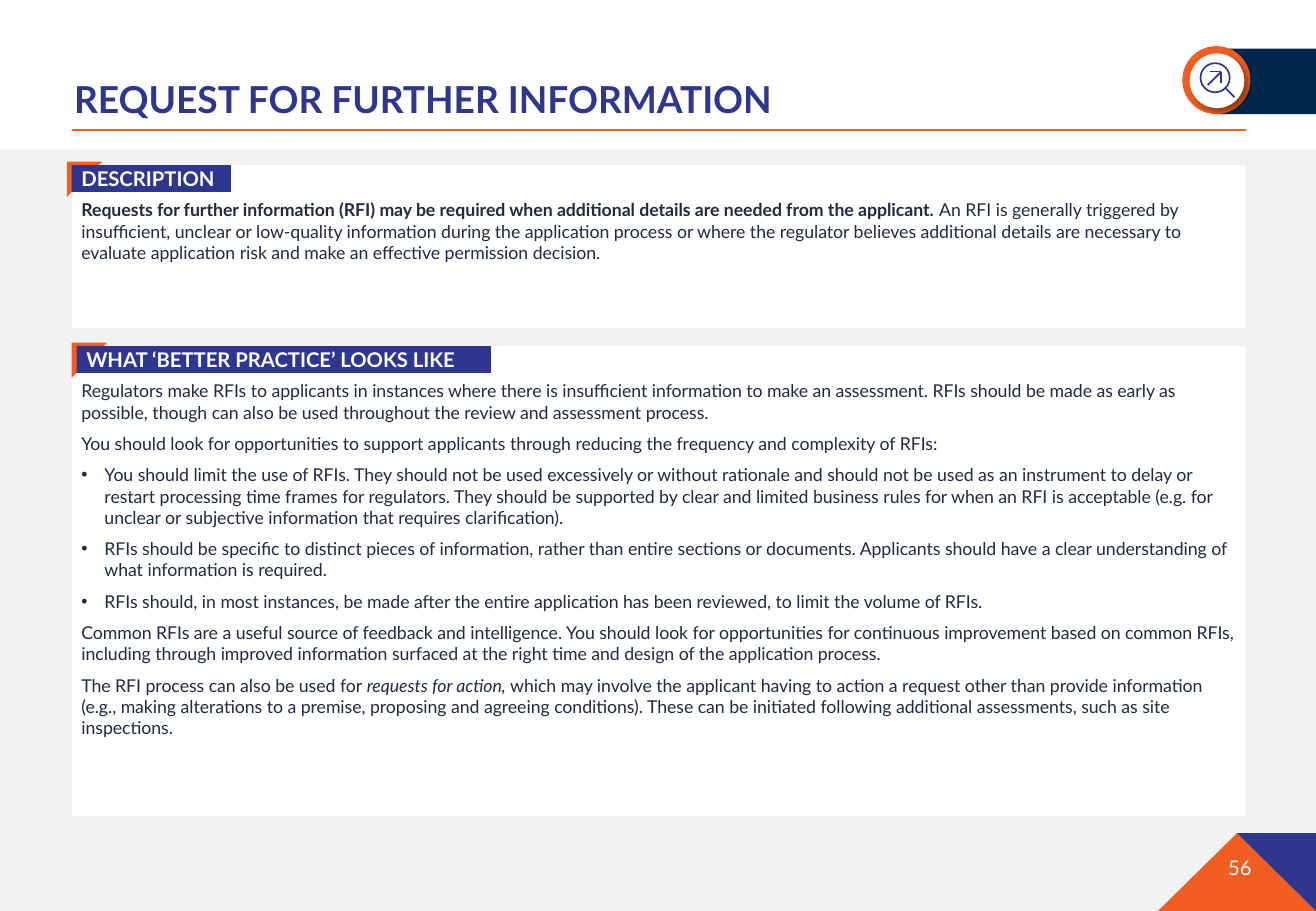
from dataclasses import dataclass

from lxml.etree import SubElement
from pptx import Presentation
from pptx.dml.color import RGBColor
from pptx.enum.shapes import MSO_CONNECTOR, MSO_SHAPE
from pptx.enum.text import MSO_ANCHOR, PP_ALIGN
from pptx.oxml.ns import qn
from pptx.util import Pt

PX = 9144


@dataclass(frozen=True)
class Theme:
    """Colours, type sizes and font of the slide."""

    font: str = "Lato"
    indigo: str = "2E368F"
    orange: str = "F25E21"
    navy: str = "00264D"
    ink: str = "1F2A44"
    grey: str = "F2F2F2"
    white: str = "FFFFFF"
    title: float = 22
    label: float = 12
    body: float = 10.5


class Slide:
    """Draws styled elements on one slide, with lengths in px."""

    def __init__(self, page, theme):
        """Keep the slide and its theme."""
        self.page = page
        self.theme = theme

    def apply(self, target, values):
        """Set each attribute named in a dict of format values."""
        for name, value in values.items():
            setattr(target, name, value)

    def paint(self, box, fill):
        """Give a shape a flat fill without line or shadow."""
        box.shadow.inherit = False
        box.line.fill.background()
        if fill:
            box.fill.solid()
            box.fill.fore_color.rgb = RGBColor.from_string(fill)
        else:
            box.fill.background()
        return box

    def shape(self, kind, area, fill, adjustments=()):
        """Add a preset shape."""
        box = self.page.shapes.add_shape(kind, *(value * PX for value in area))
        for index, value in enumerate(adjustments):
            box.adjustments[index] = value
        return self.paint(box, fill)

    def polygon(self, points, fill):
        """Add a closed outline through the points."""
        builder = self.page.shapes.build_freeform(*points[0], scale=PX)
        builder.add_line_segments(points[1:], close=True)
        return self.paint(builder.convert_to_shape(), fill)

    def outline(self, line, color, width):
        """Format the line of a shape or connector."""
        line.color.rgb = RGBColor.from_string(color)
        line.width = Pt(width)

    def line(self, start, end, color, width):
        """Add a straight line."""
        ends = (value * PX for value in (*start, *end))
        connector = self.page.shapes.add_connector(MSO_CONNECTOR.STRAIGHT, *ends)
        self.outline(connector.line, color, width)
        SubElement(connector._element.spPr, qn("a:effectLst"))

    def shadow(self, box):
        """Give a shape a soft shadow to the lower right."""
        effects = box._element.spPr.find(qn("a:effectLst"))
        outer = SubElement(effects, qn("a:outerShdw"), blurRad=str(Pt(4)),
                           dist=str(Pt(3)), dir="2700000", algn="tl", rotWithShape="0")
        color = SubElement(outer, qn("a:srgbClr"), val="000000")
        SubElement(color, qn("a:alpha"), val="40000")

    def bullet(self, para):
        """Turn a paragraph into a bullet with a hanging indent."""
        properties = para._p.get_or_add_pPr()
        properties.set("marL", str(19 * PX))
        properties.set("indent", str(-19 * PX))
        SubElement(properties, qn("a:buFont"), typeface="Arial")
        SubElement(properties, qn("a:buChar"), char="•")

    def fill_text(self, box, paragraphs, size, color, margins, anchor=MSO_ANCHOR.TOP,
                  bold=False, **layout):
        """Fill a box with paragraphs, each a bullet flag and styled spans."""
        frame = box.text_frame
        names = ("margin_left", "margin_top", "margin_right", "margin_bottom")
        values = {name: value * PX for name, value in zip(names, margins)}
        self.apply(frame, {"word_wrap": True, "vertical_anchor": anchor, **values})
        for index, (bulleted, spans) in enumerate(paragraphs):
            para = frame.add_paragraph() if index else frame.paragraphs[0]
            if bulleted:
                self.bullet(para)
            space = Pt(6 if index else 0)
            self.apply(para, {"alignment": PP_ALIGN.LEFT, "space_before": space, **layout})
            for text, style in spans:
                span = para.add_run()
                span.text = text
                self.apply(span.font, {"name": self.theme.font, "size": Pt(size),
                                       "bold": bold, **style})
                span.font.color.rgb = RGBColor.from_string(color)

    def text(self, area, words, size, color, margins, **options):
        """Add a text box of one paragraph."""
        box = self.page.shapes.add_textbox(*(value * PX for value in area))
        self.fill_text(box, [(False, [(words, {})])], size, color, margins, **options)

    def section(self, top, height, heading, tab_left, tab_width, paragraphs):
        """Add a white panel of text with a heading tab and corner mark."""
        theme = self.theme
        panel = self.shape(MSO_SHAPE.RECTANGLE, (59, top, 966, height), theme.white)
        self.fill_text(panel, paragraphs, theme.body, theme.ink, (8, 28, 8, 8))
        corner = (tab_left - 4, top - 3, 29, 29)
        self.shape(MSO_SHAPE.HALF_FRAME, corner, theme.orange, (0.24, 0.24))
        tab = self.shape(MSO_SHAPE.RECTANGLE, (tab_left, top, tab_width, 22), theme.indigo)
        self.fill_text(tab, [(False, [(heading, {})])], theme.label, theme.white,
                       (8, 5, 8, 5), MSO_ANCHOR.MIDDLE, True)

    def badge(self):
        """Add the magnifier badge with its side band."""
        theme = self.theme
        self.shape(MSO_SHAPE.RECTANGLE, (1004, 40, 79, 54), theme.navy)
        self.shape(MSO_SHAPE.OVAL, (973, 38, 56, 56), theme.orange)
        self.shadow(self.shape(MSO_SHAPE.OVAL, (979, 44, 45, 45), theme.white))
        lens = self.shape(MSO_SHAPE.OVAL, (988, 52, 24, 24), None)
        self.outline(lens.line, theme.indigo, 1)
        strokes = (((1008, 72), (1016, 80)), ((994, 70), (1005, 59)),
                   ((996, 59), (1005, 59)), ((1005, 59), (1005, 68)))
        for start, end in strokes:
            self.line(start, end, theme.indigo, 1)


DESCRIPTION = [
    (False, [
        ("Requests for further information (RFI) may be required when additional details are needed from the applicant. ", {"bold": True}),
        ("An RFI is generally triggered by insufficient, unclear or low-quality information during the application process or where the regulator believes additional details are necessary to evaluate application risk and make an effective permission decision.", {}),
    ]),
]
PRACTICE = [
    (False, [("Regulators make RFIs to applicants in instances where there is insufficient information to make an assessment. RFIs should be made as early as possible, though can also be used throughout the review and assessment process.", {})]),
    (False, [("You should look for opportunities to support applicants through reducing the frequency and complexity of RFIs:", {})]),
    (True, [("You should limit the use of RFIs. They should not be used excessively or without rationale and should not be used as an instrument to delay or restart processing time frames for regulators. They should be supported by clear and limited business rules for when an RFI is acceptable (e.g. for unclear or subjective information that requires clarification).", {})]),
    (True, [("RFIs should be specific to distinct pieces of information, rather than entire sections or documents. Applicants should have a clear understanding of what information is required.", {})]),
    (True, [("RFIs should, in most instances, be made after the entire application has been reviewed, to limit the volume of RFIs.", {})]),
    (False, [("Common RFIs are a useful source of feedback and intelligence. You should look for opportunities for continuous improvement based on common RFIs, including through improved information surfaced at the right time and design of the application process.", {})]),
    (False, [
        ("The RFI process can also be used for ", {}),
        ("requests for action,", {"italic": True}),
        (" which may involve the applicant having to action a request other than provide information (e.g., making alterations to a premise, proposing and agreeing conditions). These can be initiated following additional assessments, such as site inspections.", {}),
    ]),
]


def main():
    """Build and save the slide."""
    theme = Theme()
    deck = Presentation()
    deck.slide_width = 1083 * PX
    deck.slide_height = 750 * PX
    slide = Slide(deck.slides.add_slide(deck.slide_layouts[6]), theme)

    slide.shape(MSO_SHAPE.RECTANGLE, (0, 123, 1083, 627), theme.grey)
    slide.text((61, 62, 965, 57), "REQUEST FOR FURTHER INFORMATION", theme.title,
               theme.indigo, (0, 5, 0, 19), anchor=MSO_ANCHOR.BOTTOM, bold=True,
               line_spacing=0.9)
    slide.line((59, 107), (1025, 107), theme.orange, 1.25)
    slide.badge()

    slide.section(136, 134, "DESCRIPTION", 59, 131, DESCRIPTION)
    slide.section(285, 387, "WHAT ‘BETTER PRACTICE’ LOOKS LIKE", 63, 341, PRACTICE)

    slide.polygon([(1018, 686), (953, 750), (1083, 750)], theme.orange)
    slide.polygon([(1083, 686), (1018, 686), (1083, 750)], theme.indigo)
    slide.text((943, 699, 87, 30), "56", theme.label, theme.white, (0, 5, 0, 5),
               alignment=PP_ALIGN.RIGHT)
    deck.save("out.pptx")


if __name__ == "__main__":
    main()
